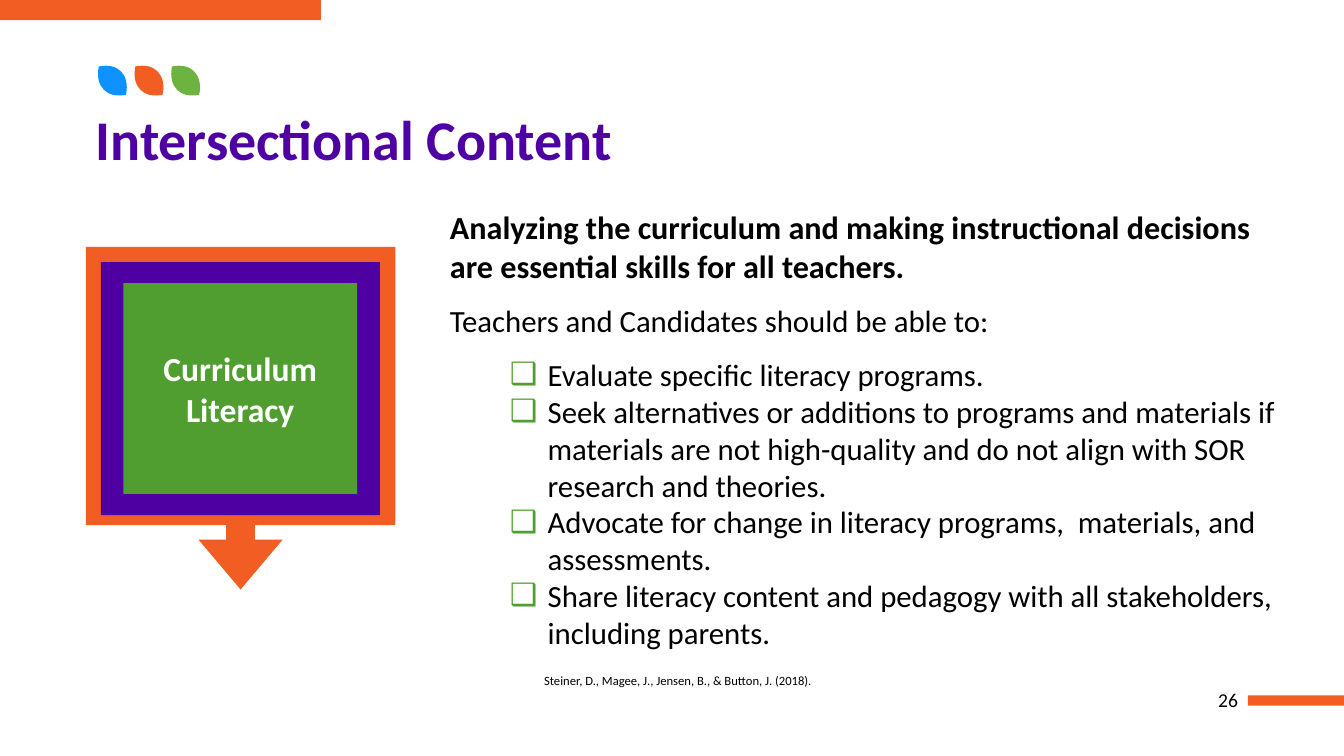
from lxml import etree
from pptx import Presentation
from pptx import util as u
from pptx.dml.color import RGBColor
from pptx.enum import shapes, text
from pptx.oxml import ns

ORANGE, PURPLE, GREEN = "F15D22", "4F00A3", "509E2F"
BLUE, LIME = "0D92FF", "6CB33F"
BLACK, WHITE = "000000", "FFFFFF"
COLS, ROWS = 160, 90
LEFT, MID, RIGHT = text.PP_ALIGN.LEFT, text.PP_ALIGN.CENTER, text.PP_ALIGN.RIGHT
TOP, CENTRE = text.MSO_ANCHOR.TOP, text.MSO_ANCHOR.MIDDLE
KIND = shapes.MSO_SHAPE
# Two cubic curves, three points each, from the leaf's tip and back
LEAF = ((2.28, -0.48), (3.72, 0.96), (3.24, 3.36),
        (0.96, 3.84), (-0.48, 2.4), (0, 0))


def rgb(code):
    return RGBColor.from_string(code)


class Deck:
    """Style and current slide; lengths are cells of a 160 by 90 grid."""

    font = "Calibri"

    def __init__(self):
        self.prs = Presentation()
        self.prs.slide_width, self.prs.slide_height = u.Inches(13.333), u.Inches(7.5)
        self.cell = self.prs.slide_height / ROWS
        self.slide = self.prs.slides.add_slide(self.prs.slide_layouts[6])

    def size(self, *cells):
        return [u.Emu(round(n * self.cell)) for n in cells]

    def paint(self, shape, fill):
        shape.shadow.inherit = False
        shape.fill.solid()
        shape.fill.fore_color.rgb = rgb(fill)
        shape.line.fill.background()
        return shape

    def block(self, box, fill, kind=KIND.RECTANGLE):
        return self.paint(self.slide.shapes.add_shape(kind, *self.size(*box)), fill)

    def leaf(self, x, y, fill):
        pen = self.slide.shapes.build_freeform(*self.size(x, y))
        pen.add_line_segments([self.size(x + dx, y + dy) for dx, dy in LEAF])
        shape = self.paint(pen.convert_to_shape(), fill)
        # Turn each three straight steps into one curve
        lines = list(shape._element.iter(ns.qn("a:lnTo")))
        for i in range(0, len(LEAF), 3):
            bend = etree.Element(ns.qn("a:cubicBezTo"))
            lines[i].addprevious(bend)
            for line in lines[i:i + 3]:
                bend.append(line[0])
                line.getparent().remove(line)

    def frame(self, shape, pad, anchor=TOP):
        tf = shape.text_frame
        tf.word_wrap = True
        tf.vertical_anchor = anchor
        tf.margin_left = tf.margin_right = u.Inches(pad[0])
        tf.margin_top = tf.margin_bottom = u.Inches(pad[1])
        return tf

    def label(self, box, pad=(0.1, 0.1), anchor=TOP):
        return self.frame(self.slide.shapes.add_textbox(*self.size(*box)), pad, anchor)

    def para(self, tf, words, size, color=BLACK, bold=False, align=LEFT,
             before=0, bullet=False):
        first = tf.paragraphs[0]
        p = tf.add_paragraph() if first.runs else first
        p.alignment = align
        if bullet:
            self.bullet(p)
        if before:
            p.space_before = u.Pt(before)
        run = p.add_run()
        run.text = words
        run.font.name, run.font.size, run.font.bold = self.font, u.Pt(size), bold
        run.font.color.rgb = rgb(color)
        return p

    def bullet(self, p):
        props = p._p.get_or_add_pPr()
        left, hang = self.size(11.64, -4.5)
        props.set("marL", str(left))
        props.set("indent", str(hang))
        tint = etree.SubElement(props, ns.qn("a:buClr"))
        etree.SubElement(tint, ns.qn("a:srgbClr")).set("val", GREEN)
        etree.SubElement(props, ns.qn("a:buFont")).set("typeface", self.font)
        etree.SubElement(props, ns.qn("a:buChar")).set("char", "❑")


def main():
    deck = Deck()

    # Page trim and number
    deck.block((148.56, 82.8, COLS - 148.56, 1.2), ORANGE)
    deck.block((0, 0, 38.22, 2.4), ORANGE)
    for i, fill in enumerate((BLUE, ORANGE, LIME)):
        deck.leaf(11.76 + 4.36 * i, 7.92, fill)
    page = deck.label((138.26, 81.6, 10.32, 3.36), (0.1, 0.05), CENTRE)
    deck.para(page, "26", 14, align=RIGHT)

    # Title
    title = deck.label((10.2, 12.72, 137.04, 8.4), (0.1, 0.05))
    deck.para(title, "Intersectional Content", 40, PURPLE, True).line_spacing = 0.9

    # Main text
    body = deck.label((52.38, 23.52, 102.96, 55.8))
    deck.para(body, "Analyzing the curriculum and making instructional decisions "
              "are essential skills for all teachers.", 23, bold=True)
    deck.para(body, "Teachers and Candidates should be able to:", 22, before=12)
    skills = (
        "Evaluate specific literacy programs.",
        "Seek alternatives or additions to programs and materials if materials "
        "are not high-quality and do not align with SOR research and theories.",
        "Advocate for change in literacy programs,  materials, and assessments.",
        "Share literacy content and pedagogy with all stakeholders, including parents.",
    )
    for i, skill in enumerate(skills):
        deck.para(body, skill, 22, before=0 if i else 12, bullet=True)

    # Citation
    cite = deck.label((63.6, 79.2, 82.44, 4.2))
    deck.para(cite, "Steiner, D., Magee, J., Jensen, B., & Button, J. (2018).", 9)

    # Nested callout pointing down
    arrow = deck.block((8.24, 31.36, 40.8, 36.84), ORANGE, KIND.RIGHT_ARROW_CALLOUT)
    arrow.rotation = 90
    for i, part in enumerate((0.093, 0.136, 0.161, 0.812)):
        arrow.adjustments[i] = part
    deck.block((12, 31.2, 33.24, 30.12), PURPLE)
    core = deck.block((14.68, 33.72, 27.84, 25.08), GREEN)
    deck.para(deck.frame(core, (0.13, 0.13), CENTRE), "Curriculum Literacy",
              24, WHITE, True, MID)

    deck.prs.save("out.pptx")


if __name__ == "__main__":
    main()
